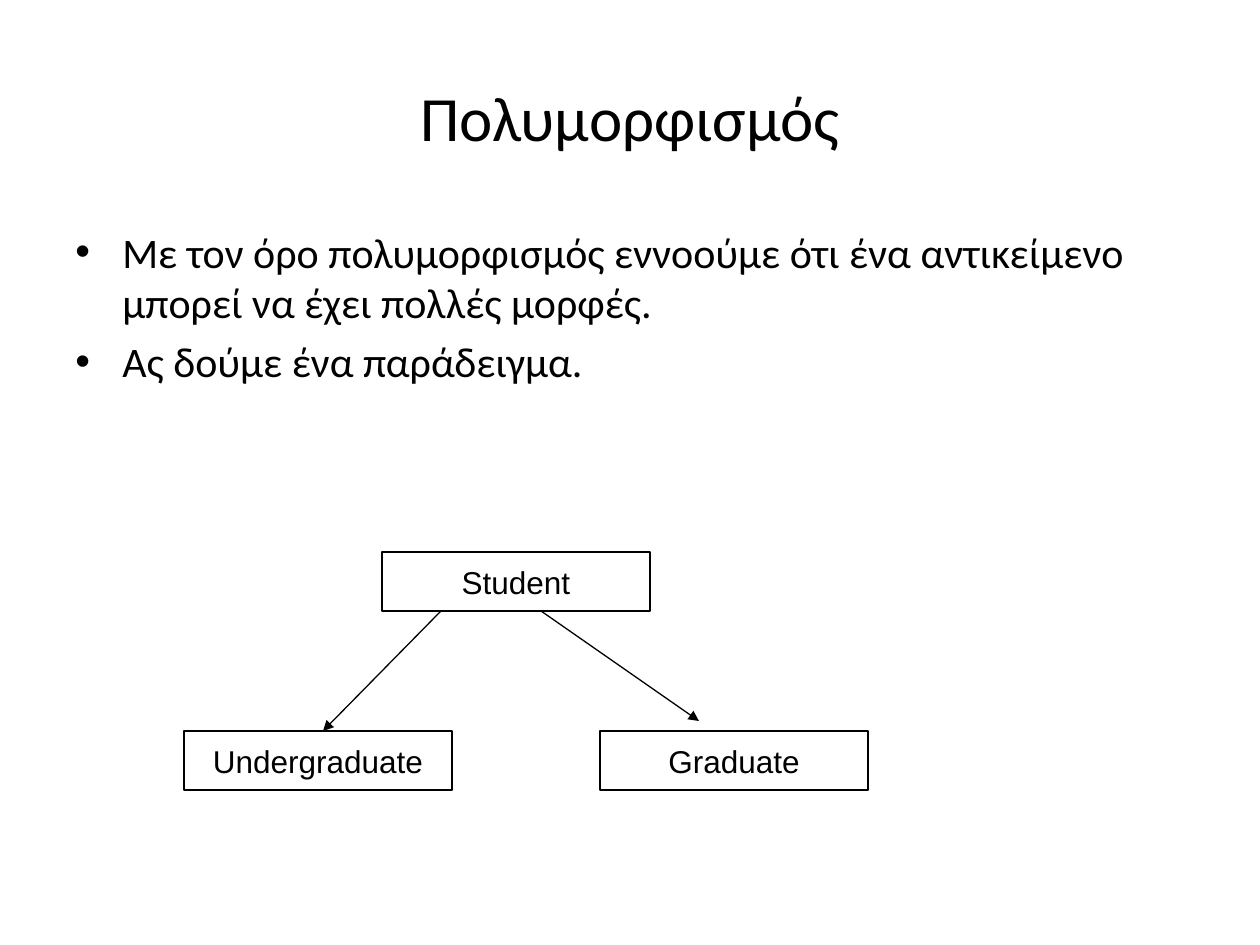
from dataclasses import dataclass

from lxml import etree
from pptx import Presentation
from pptx import util as u
from pptx.dml.color import RGBColor
from pptx.enum import shapes, text
from pptx.oxml.ns import qn

EMU_PER_PX = 914400 / 126


@dataclass(frozen=True)
class Theme:
    ink: RGBColor = RGBColor(0, 0, 0)
    prose_font: str = "Calibri"
    diagram_font: str = "Arial"
    title_size: int = 36
    body_size: int = 24
    label_size: int = 18
    line_width: float = 0.75


THEME = Theme()
CLASS_SIZE = (268, 59)
BULLETS = (
    "Με τον όρο πολυμορφισμός εννοούμε ότι ένα αντικείμενο μπορεί να έχει πολλές μορφές.",
    "Ας δούμε ένα παράδειγμα.",
)
CLASSES = (
    ("Student", 382, 552),
    ("Graduate", 600, 731),
    ("Undergraduate", 184, 731),
)
ARROWS = (
    ((441, 611), (323, 731)),
    ((541, 611), (699, 721)),
)


def px(length):
    return u.Emu(round(length * EMU_PER_PX))


def write(paragraph, words, *, size, font=THEME.prose_font,
          align=text.PP_ALIGN.LEFT, before=0):
    paragraph.alignment = align
    paragraph.space_before = u.Pt(before)
    run = paragraph.add_run()
    run.text = words
    run.font.name = font
    run.font.size = u.Pt(size)
    run.font.color.rgb = THEME.ink


def add_bullet_mark(paragraph, indent):
    """Hang the paragraph by indent px behind a round bullet."""
    props = paragraph._p.get_or_add_pPr()
    props.set("marL", str(px(indent)))
    props.set("indent", str(-px(indent)))
    etree.SubElement(props, qn("a:buFont")).set("typeface", "Arial")
    etree.SubElement(props, qn("a:buChar")).set("char", "•")


def set_title(slide, words):
    title = slide.shapes.title
    title.left, title.top, title.width, title.height = map(px, (63, 38, 1134, 157))
    frame = title.text_frame
    frame.vertical_anchor = text.MSO_ANCHOR.MIDDLE
    write(frame.paragraphs[0], words, size=THEME.title_size,
          align=text.PP_ALIGN.CENTER)


def add_bullets(slide, items):
    frame = slide.shapes.add_textbox(*map(px, (63, 220, 1134, 624))).text_frame
    frame.word_wrap = True
    for number, item in enumerate(items):
        paragraph = frame.add_paragraph() if number else frame.paragraphs[0]
        write(paragraph, item, size=THEME.body_size, before=5)
        add_bullet_mark(paragraph, 47)


def style_line(line):
    line.color.rgb = THEME.ink
    line.width = u.Pt(THEME.line_width)


def add_class_box(slide, name, left, top):
    box = slide.shapes.add_shape(shapes.MSO_SHAPE.RECTANGLE,
                                 *map(px, (left, top, *CLASS_SIZE)))
    box.shadow.inherit = False
    box.fill.background()
    style_line(box.line)
    frame = box.text_frame
    frame.word_wrap = False
    frame.vertical_anchor = text.MSO_ANCHOR.MIDDLE
    write(frame.paragraphs[0], name, size=THEME.label_size,
          font=THEME.diagram_font, align=text.PP_ALIGN.CENTER)


def add_arrow(slide, start, end):
    arrow = slide.shapes.add_connector(shapes.MSO_CONNECTOR.STRAIGHT,
                                       *map(px, (*start, *end)))
    style_line(arrow.line)
    etree.SubElement(arrow.line._get_or_add_ln(), qn("a:tailEnd")).set("type", "triangle")
    etree.SubElement(arrow._element.spPr, qn("a:effectLst"))


def main():
    deck = Presentation()
    deck.slide_width, deck.slide_height = px(1260), px(945)
    slide = deck.slides.add_slide(deck.slide_layouts.get_by_name("Title Only"))
    set_title(slide, "Πολυμορφισμός")
    add_bullets(slide, BULLETS)
    for name, left, top in CLASSES:
        add_class_box(slide, name, left, top)
    for start, end in ARROWS:
        add_arrow(slide, start, end)
    deck.save("out.pptx")


if __name__ == "__main__":
    main()
